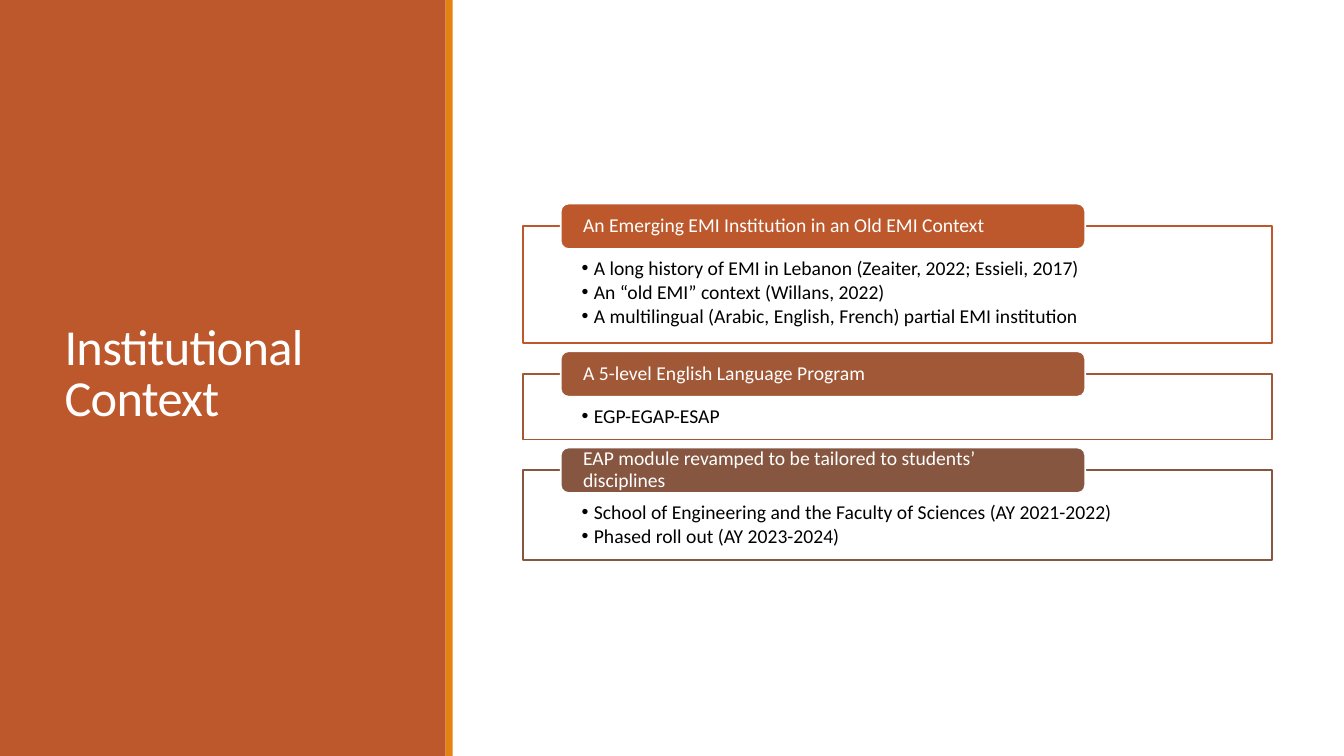
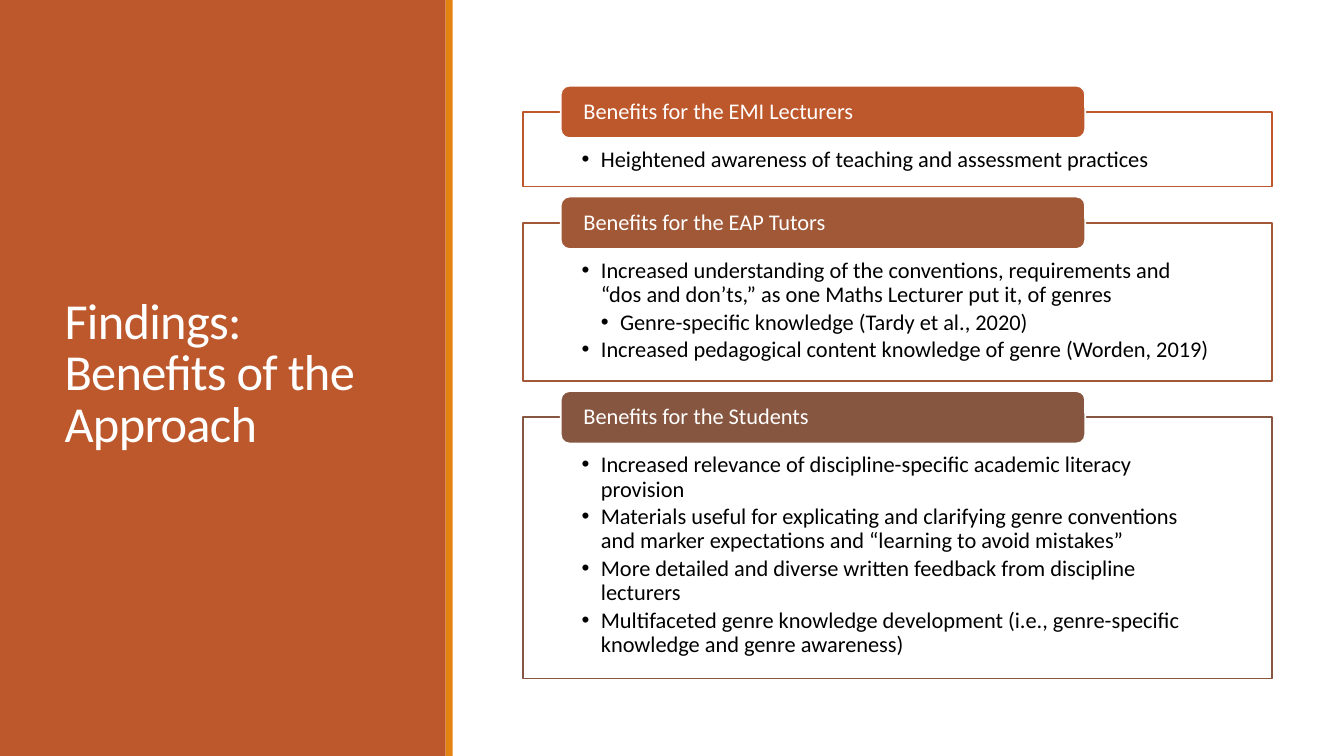
from lxml.etree import SubElement
from pptx import Presentation
from pptx.dml.color import RGBColor
from pptx.enum.shapes import MSO_SHAPE
from pptx.enum.text import MSO_ANCHOR, MSO_AUTO_SIZE, PP_ALIGN
from pptx.oxml.ns import qn
from pptx.util import Inches, Pt

FONT = "Calibri"
WHITE, BLACK, RUST, AMBER = "FFFFFF", "000000", "BD582C", "E48312"
SECTION_COLOURS = [RUST, "A05837", "865640"]
SLIDE_W, SLIDE_H = 13.33, 7.5
PANEL_W, STRIPE_W = 4.42, 0.07
BOX_LEFT, BOX_W = 5.19, 7.43
TAB_INDENT, TAB_W = BOX_W * 0.05, BOX_W * 0.7

# Each section: heading, box height, bullets as (level, text)
SLIDES = [
    {
        "title": "Institutional Context",
        "size": 14, "top": 2.02, "tab_h": 0.45, "gap": 0.08,
        "hang": 0.12, "insets": (0.58, 0.32, 0.58, 0.11),
        "sections": [
            ("An Emerging EMI Institution in an Old EMI Context", 1.16, [
                (1, "A long history of EMI in Lebanon (Zeaiter, 2022; Essieli, 2017)"),
                (1, "An “old EMI” context (Willans, 2022)"),
                (1, "A multilingual (Arabic, English, French) partial EMI institution"),
            ]),
            ("A 5-level English Language Program", 0.65, [
                (1, "EGP-EGAP-ESAP"),
            ]),
            ("EAP module revamped to be tailored to students’ disciplines", 0.89, [
                (1, "School of Engineering and the Faculty of Sciences (AY 2021-2022)"),
                (1, "Phased roll out (AY 2023-2024)"),
            ]),
        ],
    },
    {
        "title": "Findings: Benefits of the Approach",
        "size": 16, "top": 0.85, "tab_h": 0.52, "gap": 0.1,
        "hang": 0.19, "insets": (0.58, 0.36, 0.58, 0.12),
        "sections": [
            ("Benefits for the EMI Lecturers", 0.74, [
                (1, "Heightened awareness of teaching and assessment practices"),
            ]),
            ("Benefits for the EAP Tutors", 1.57, [
                (1, "Increased understanding of the conventions, requirements and "
                    "“dos and don’ts,” as one Maths Lecturer put it, of genres"),
                (2, "Genre-specific knowledge (Tardy et al., 2020)"),
                (1, "Increased pedagogical content knowledge of genre (Worden, 2019)"),
            ]),
            ("Benefits for the Students", 2.59, [
                (1, "Increased relevance of discipline-specific academic literacy provision"),
                (1, "Materials useful for explicating and clarifying genre conventions "
                    "and marker expectations and “learning to avoid mistakes”"),
                (1, "More detailed and diverse written feedback from discipline lecturers"),
                (1, "Multifaceted genre knowledge development (i.e., genre-specific "
                    "knowledge and genre awareness)"),
            ]),
        ],
    },
]


def colour(code):
    return RGBColor.from_string(code)


def add_block(slide, preset, left, top, width, height, fill, line=None):
    block = slide.shapes.add_shape(
        preset, Inches(left), Inches(top), Inches(width), Inches(height))
    block.shadow.inherit = False
    block.fill.solid()
    block.fill.fore_color.rgb = colour(fill)
    if line:
        block.line.color.rgb = colour(line)
        block.line.width = Pt(1.25)
    else:
        block.line.fill.background()
    return block


def set_frame(frame, anchor, insets):
    frame.word_wrap = True
    frame.auto_size = MSO_AUTO_SIZE.NONE
    frame.vertical_anchor = anchor
    (frame.margin_left, frame.margin_top,
     frame.margin_right, frame.margin_bottom) = map(Inches, insets)


def write(paragraph, text, size, ink, spacing=0.9):
    paragraph.alignment = PP_ALIGN.LEFT
    paragraph.line_spacing = spacing
    run = paragraph.add_run()
    run.text = text
    run.font.name = FONT
    run.font.size = Pt(size)
    run.font.color.rgb = colour(ink)
    return run


def add_bullet(paragraph, level, hang):
    properties = paragraph._p.get_or_add_pPr()
    properties.set("marL", str(Inches(hang * level)))
    properties.set("indent", str(-Inches(hang)))
    SubElement(properties, qn("a:buFont"), typeface="Arial")
    SubElement(properties, qn("a:buChar"), char="•")


def add_side_title(slide, text):
    """Draw the coloured side panel and set the title on top of it."""
    panel = add_block(slide, MSO_SHAPE.RECTANGLE, 0, 0, PANEL_W, SLIDE_H, RUST)
    add_block(slide, MSO_SHAPE.RECTANGLE, PANEL_W, 0, STRIPE_W, SLIDE_H, AMBER)
    title = slide.shapes.title
    panel.element.addnext(title.element)
    title.left, title.top = Inches(0.54), Inches(0.57)
    title.width, title.height = Inches(3.37), Inches(6.31)
    set_frame(title.text_frame, MSO_ANCHOR.MIDDLE, (0.1, 0.05, 0.1, 0.05))
    run = write(title.text_frame.paragraphs[0], text, 36, WHITE, 0.85)
    run.font._element.set("spc", "-50")


def add_section(slide, content, section, top, accent):
    """Draw a bullet box with its heading tab; return the box's bottom."""
    heading, box_h, bullets = section
    size, tab_h, hang = content["size"], content["tab_h"], content["hang"]
    box_top = top + tab_h / 2
    box = add_block(slide, MSO_SHAPE.RECTANGLE,
                    BOX_LEFT, box_top, BOX_W, box_h, WHITE, accent)
    frame = box.text_frame
    set_frame(frame, MSO_ANCHOR.TOP, content["insets"])
    for index, (level, text) in enumerate(bullets):
        paragraph = frame.add_paragraph() if index else frame.paragraphs[0]
        write(paragraph, text, size, BLACK)
        paragraph.space_after = Pt(size * 0.15)
        add_bullet(paragraph, level, hang)

    tab = add_block(slide, MSO_SHAPE.ROUNDED_RECTANGLE,
                    BOX_LEFT + TAB_INDENT, top, TAB_W, tab_h, accent, WHITE)
    set_frame(tab.text_frame, MSO_ANCHOR.MIDDLE, (0.2, 0, 0.2, 0))
    write(tab.text_frame.paragraphs[0], heading, size, WHITE)
    return box_top + box_h


def main():
    deck = Presentation()
    deck.slide_width, deck.slide_height = Inches(SLIDE_W), Inches(SLIDE_H)
    for content in SLIDES:
        slide = deck.slides.add_slide(deck.slide_layouts[5])
        add_side_title(slide, content["title"])
        top = content["top"]
        for section, accent in zip(content["sections"], SECTION_COLOURS):
            top = add_section(slide, content, section, top, accent) + content["gap"]
    deck.save("out.pptx")


if __name__ == "__main__":
    main()
